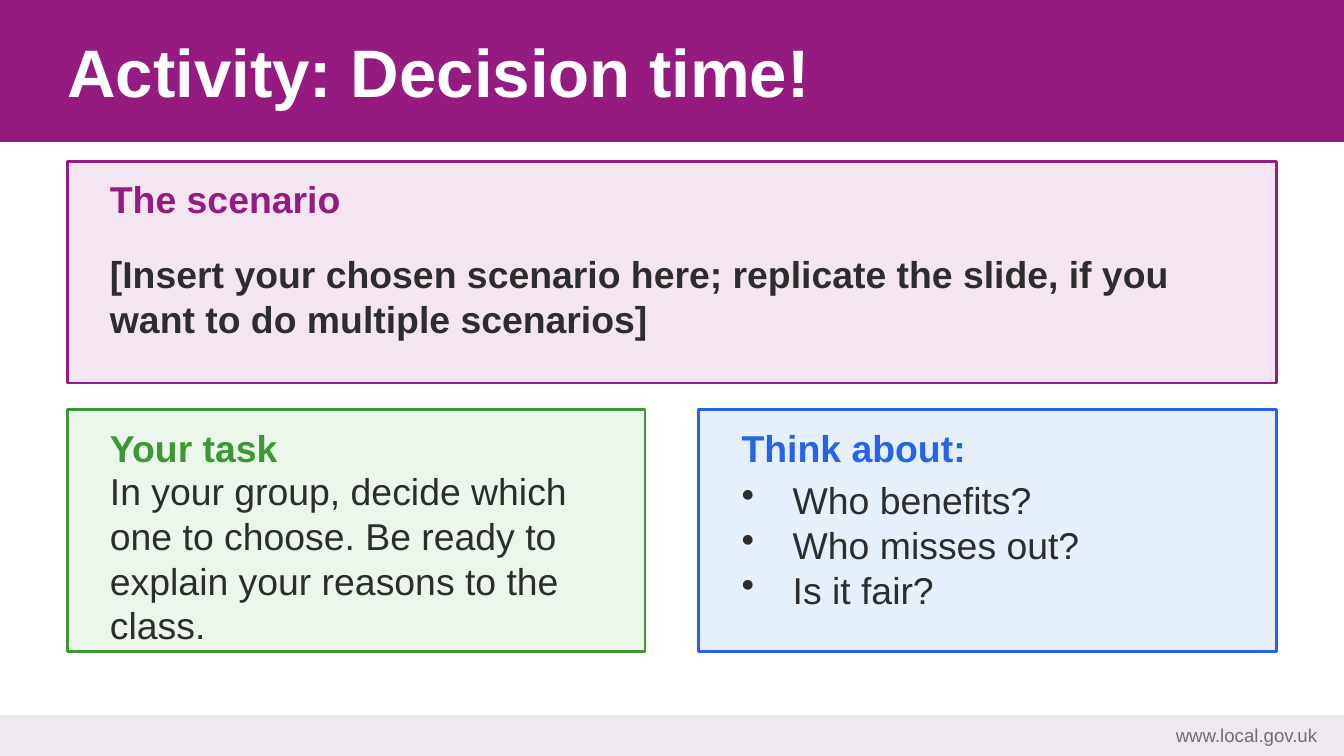
from dataclasses import dataclass

import pptx
import pptx.dml.color
import pptx.enum.shapes
import pptx.enum.text
import pptx.oxml
import pptx.oxml.ns
import pptx.util

Pt = pptx.util.Pt
RGB = pptx.dml.color.RGBColor.from_string
ALIGN = pptx.enum.text.PP_ALIGN
MIDDLE = pptx.enum.text.MSO_ANCHOR.MIDDLE
RECTANGLE = pptx.enum.shapes.MSO_SHAPE.RECTANGLE


@dataclass(frozen=True)
class Theme:
    font: str = "Arial"
    title_size: int = 36
    text_size: int = 20
    footer_size: int = 10
    white: str = "FFFFFF"
    ink: str = "2D2D2D"
    grey: str = "706F6F"
    purple: str = "951B81"
    purple_tint: str = "F3E6F1"
    green: str = "3A9930"
    green_tint: str = "EAF7EA"
    blue: str = "2563EB"
    blue_tint: str = "E6F0FA"
    footer_fill: str = "F0E8EF"


THEME = Theme()
BULLET_INDENT = Pt(27.36)


@dataclass(frozen=True)
class Box:
    left: float
    top: float
    width: float
    height: float

    def lengths(self):
        return [Pt(v) for v in (self.left, self.top, self.width, self.height)]


def add_rectangle(slide, box, fill, line, line_width=1):
    rectangle = slide.shapes.add_shape(RECTANGLE, *box.lengths())
    rectangle.shadow.inherit = False
    rectangle.fill.solid()
    rectangle.fill.fore_color.rgb = RGB(fill)
    rectangle.line.color.rgb = RGB(line)
    rectangle.line.width = Pt(line_width)
    return rectangle


def add_bullet(paragraph):
    properties = paragraph._p.get_or_add_pPr()
    properties.set("marL", str(BULLET_INDENT))
    properties.set("indent", str(-BULLET_INDENT))
    bullet = pptx.oxml.parse_xml(
        f'<a:buChar {pptx.oxml.ns.nsdecls("a")} char="•"/>')
    properties.append(bullet)


def write(frame, lines, size, colour, bold=False, align=ALIGN.LEFT,
          bullets=False, inset=True):
    """Fill a text frame with one paragraph per line, centred vertically."""
    frame.word_wrap = True
    frame.auto_size = pptx.enum.text.MSO_AUTO_SIZE.NONE
    frame.vertical_anchor = MIDDLE
    if not inset:
        frame.margin_left = frame.margin_right = Pt(0)
        frame.margin_top = frame.margin_bottom = Pt(0)
    for number, line in enumerate(lines):
        paragraph = frame.add_paragraph() if number else frame.paragraphs[0]
        paragraph.alignment = align
        if bullets:
            add_bullet(paragraph)
        run = paragraph.add_run()
        run.text = line
        run.font.name = THEME.font
        run.font.size = Pt(size)
        run.font.bold = bold
        run.font.color.rgb = RGB(colour)


def add_header(slide, box, heading):
    band = add_rectangle(slide, box, THEME.purple, THEME.purple)
    title = slide.shapes.title
    title.element.addprevious(band.element)  # keeps the band behind the title
    title.left, title.top, title.width, title.height = Box(
        box.left + 36, box.top + 7.2, box.width - 72, box.height - 14.4).lengths()
    write(title.text_frame, [heading], THEME.title_size, THEME.white,
          bold=True, inset=False)


def add_panel(slide, box, heading, body, accent, tint, body_height,
              bold=False, bullets=False):
    add_rectangle(slide, box, tint, accent, 1.5)
    left, width = box.left + 15.84, box.width - 30
    heading_box = Box(left, box.top + 5, width, 30.24)
    body_box = Box(left, box.top + 36, width, body_height)
    write(slide.shapes.add_textbox(*heading_box.lengths()).text_frame,
          [heading], THEME.text_size, accent, bold=True)
    write(slide.shapes.add_textbox(*body_box.lengths()).text_frame,
          body, THEME.text_size, THEME.ink, bold=bold, bullets=bullets)


def add_footer(slide, box, address):
    add_rectangle(slide, box, THEME.footer_fill, THEME.footer_fill)
    address_box = Box(box.left + 540, box.top, box.width - 554.4, 20.16)
    write(slide.shapes.add_textbox(*address_box.lengths()).text_frame,
          [address], THEME.footer_size, THEME.grey, align=ALIGN.RIGHT, inset=False)


def main():
    deck = pptx.Presentation()
    deck.slide_width, deck.slide_height = Pt(720), Pt(405)
    slide = deck.slides.add_slide(deck.slide_layouts.get_by_name("Title Only"))

    margin, gap = 36, 28.8
    full_width = 720 - 2 * margin
    half_width = (full_width - gap) / 2

    add_header(slide, Box(0, 0, 720, 75.6), "Activity: Decision time!")
    add_panel(slide, Box(margin, 86.4, full_width, 118.8), "The scenario",
              ["[Insert your chosen scenario here; replicate the slide, "
               "if you want to do multiple scenarios]"],
              THEME.purple, THEME.purple_tint, body_height=72.72, bold=True)
    add_panel(slide, Box(margin, 219.6, half_width, 129.6), "Your task",
              ["In your group, decide which one to choose. "
               "Be ready to explain your reasons to the class."],
              THEME.green, THEME.green_tint, body_height=86.4)
    add_panel(slide, Box(margin + half_width + gap, 219.6, half_width, 129.6),
              "Think about:",
              ["Who benefits?", "Who misses out?", "Is it fair?"],
              THEME.blue, THEME.blue_tint, body_height=72, bullets=True)
    add_footer(slide, Box(0, 383.76, 720, 21.6), "www.local.gov.uk")

    deck.save("out.pptx")


if __name__ == "__main__":
    main()
